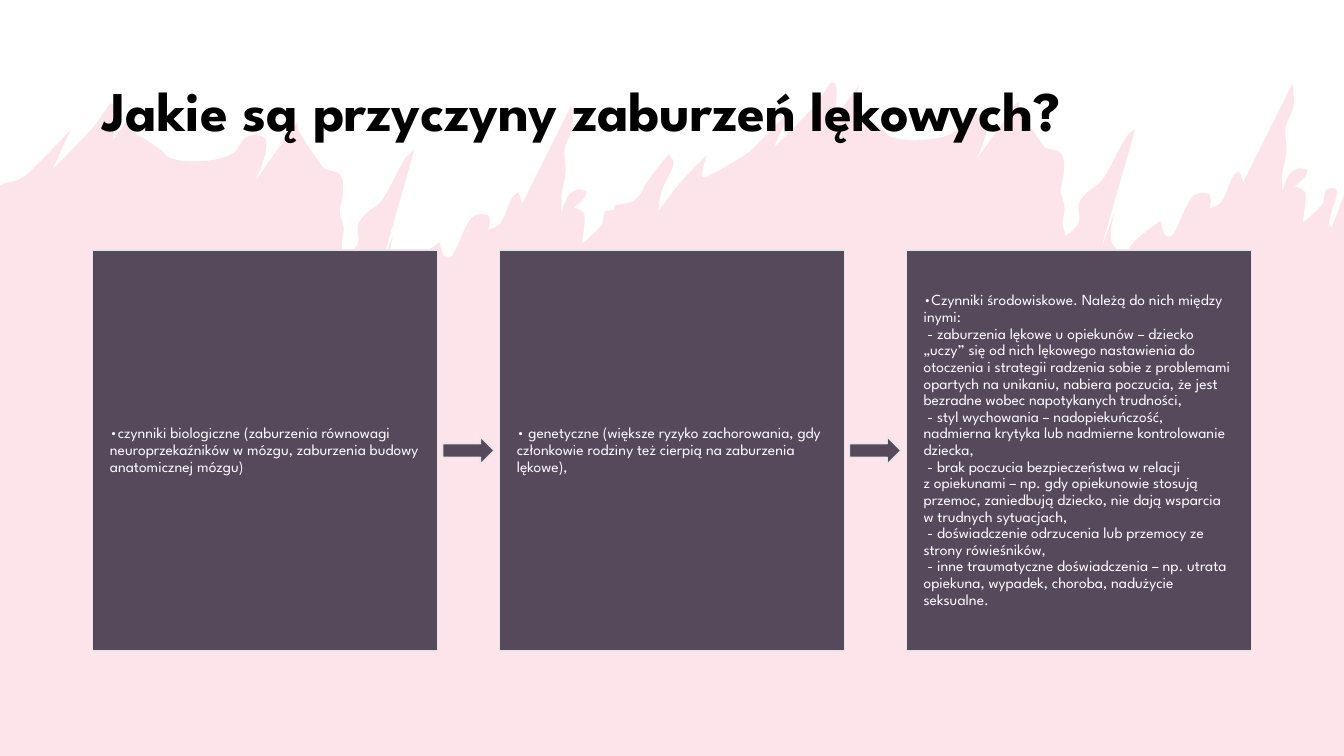
from dataclasses import dataclass
from math import dist

from lxml.etree import Element, SubElement
from pptx import Presentation
from pptx.dml.color import RGBColor
from pptx.enum.shapes import MSO_SHAPE as Preset
from pptx.enum.text import MSO_ANCHOR as Anchor, MSO_AUTO_SIZE as AutoSize, PP_ALIGN as Align
from pptx.oxml.ns import qn
from pptx.shapes.autoshape import Shape
from pptx.slide import Slide
from pptx.text.text import TextFrame
from pptx.util import Inches, Pt

Point = tuple[float, float]


@dataclass(frozen=True)
class Theme:
    font: str = "League Spartan"
    paper: str = "FFFFFF"
    wave: str = "F07C98"
    wave_alpha: int = 20
    title: str = "000000"
    card: str = "57495C"
    outline: str = "E7E6E6"
    card_text: str = "FFFFFF"
    title_size: int = 40
    card_size: int = 11


@dataclass(frozen=True)
class Box:
    left: float
    top: float
    width: float
    height: float

    def emu(self) -> tuple[int, ...]:
        return tuple(Inches(v) for v in (self.left, self.top, self.width, self.height))


THEME = Theme()
PAGE_WIDTH, PAGE_HEIGHT = 13.33, 7.5
TITLE_BOX = Box(0.92, 0.4, 11.5, 1.45)
CARD_ROW = Box(0.92, 2.48, 11.49, 3.98)
CARD_WIDTH, CARD_INSET = 3.42, 0.17
ARROW_WIDTH, ARROW_HEIGHT, ARROW_GAP = 0.51, 0.27, 0.05

HARD_SPACE = chr(160)
BOUND_WORDS = ("u", "w", "z", "i", "•")
TITLE = "Jakie są przyczyny zaburzeń lękowych?"
CAUSES = [
    "•czynniki biologiczne (zaburzenia równowagi neuroprzekaźników w mózgu, "
    "zaburzenia budowy anatomicznej mózgu)",
    "• genetyczne (większe ryzyko zachorowania, gdy członkowie rodziny też cierpią "
    "na zaburzenia lękowe),",
    "\v - ".join([
        "•Czynniki środowiskowe. Należą do nich między inymi:",
        "zaburzenia lękowe u opiekunów – dziecko „uczy” się od nich lękowego nastawienia "
        "do otoczenia i strategii radzenia sobie z problemami opartych na unikaniu, "
        "nabiera poczucia, że jest bezradne wobec napotykanych trudności,",
        "styl wychowania – nadopiekuńczość, nadmierna krytyka lub nadmierne "
        "kontrolowanie dziecka,",
        "brak poczucia bezpieczeństwa w relacji z opiekunami – np. gdy opiekunowie "
        "stosują przemoc, zaniedbują dziecko, nie dają wsparcia w trudnych sytuacjach,",
        "doświadczenie odrzucenia lub przemocy ze strony rówieśników,",
        "inne traumatyczne doświadczenia – np. utrata opiekuna, wypadek, choroba, "
        "nadużycie seksualne.",
    ]),
]

# The crest is drawn twice: once in place, once shifted to the left edge.
CREST_SHIFT = (-7.15, 0.21)
CREST: list[Point] = [
    (7.32, 1.58), (7.45, 1.49), (7.85, 1.08), (7.67, 1.47), (8.06, 1.07), (8.2, 0.88),
    (8.24, 0.82), (8.28, 0.83), (8.3, 0.91), (8.27, 1.18), (8.52, 0.85), (8.49, 1.1),
    (8.59, 1.17), (8.75, 1.28), (8.84, 1.36), (9.13, 1.39), (9.45, 1.32), (9.61, 1.14),
    (9.79, 1.19), (9.68, 1.59), (10.1, 1), (10.12, 1.1), (10.36, 1.46), (10.38, 1.47),
    (10.53, 1.53), (10.55, 1.73), (10.52, 1.88), (10.56, 2.06), (10.54, 2.21), (10.57, 2.34),
    (10.7, 2.21), (10.7, 2.03), (10.78, 1.91), (10.93, 1.79), (11.17, 1.36),
    (11.26, 1.28), (10.91, 2.5), (11.05, 2.12), (11.02, 2.38), (11.12, 2.52),
    (11.15, 2.52), (11.24, 2.41), (11.3, 2.35), (11.51, 2.19), (11.54, 2.3),
    (11.58, 2.35), (11.64, 2.32), (11.83, 1.95), (11.98, 1.92), (12.01, 1.99),
    (11.99, 2.07), (12.11, 2.01), (12.23, 1.75), (12.29, 1.7), (12.32, 1.77),
    (12.33, 1.81), (12.82, 0.83), (12.83, 1.05), (12.75, 1.27), (12.76, 1.5),
    (12.72, 1.72), (12.72, 1.91), (12.78, 1.74), (12.88, 1.67), (12.97, 1.69),
    (12.94, 1.76), (12.84, 1.85), (12.9, 1.87), (12.95, 1.92), (12.92, 2.21),
    (13.12, 2.02), (13.15, 1.89), (13.24, 1.87),
]
BRIDGE: list[Point] = [
    (6.1, 2.04), (6.27, 2), (6.34, 1.94), (6.43, 1.79), (6.63, 1.53), (6.68, 1.62),
    (6.56, 1.9), (6.53, 2.1), (6.74, 1.82), (7.01, 1.54), (6.96, 1.75), (7, 1.76),
]
RIGHT_EDGE: list[Point] = [(13.26, 1.92), (13.18, 2.21), (13.21, 2.26), (PAGE_WIDTH, 1.93)]


def color(code: str) -> RGBColor:
    return RGBColor.from_string(code)


def bind_short_words(text: str) -> str:
    """Keep one-letter words on the same line as the word after them."""
    words = text.split(" ")
    gaps = [HARD_SPACE if word in BOUND_WORDS else " " for word in words[:-1]]
    return "".join(word + gap for word, gap in zip(words, [*gaps, ""]))


def curve_handles(points: list[Point]) -> list[tuple[Point, Point]]:
    """Give each segment two control points, smooth in gentle bends and sharp at tips."""
    tangents: list[Point] = [(0, 0)]
    for (ax, ay), (bx, by), (cx, cy) in zip(points, points[1:], points[2:]):
        sharp = (bx - ax) * (cx - bx) + (by - ay) * (cy - by) <= 0
        chord = dist((ax, ay), (cx, cy))
        tangents.append((0, 0) if sharp else ((cx - ax) / chord, (cy - ay) / chord))
    tangents.append((0, 0))

    handles = []
    for start, end, leave, arrive in zip(points, points[1:], tangents, tangents[1:]):
        reach = dist(start, end) / 3
        handles.append((
            (start[0] + leave[0] * reach, start[1] + leave[1] * reach),
            (end[0] - arrive[0] * reach, end[1] - arrive[1] * reach),
        ))
    return handles


def draw_wave(page: Slide) -> None:
    dx, dy = CREST_SHIFT
    left_crest = [(x + dx, y + dy) for x, y in CREST]
    ridge = [(0, 1.84), (0.07, 1.81), *left_crest, *BRIDGE, *CREST, *RIGHT_EDGE]
    outline = [(Inches(x), Inches(y)) for x, y in [*ridge, (PAGE_WIDTH, PAGE_HEIGHT), (0, PAGE_HEIGHT)]]
    builder = page.shapes.build_freeform(*outline[0])
    builder.add_line_segments(outline[1:], close=True)
    wave = builder.convert_to_shape()
    wave.shadow.inherit = False
    wave.line.fill.background()
    wave.fill.solid()
    wave.fill.fore_color.rgb = color(THEME.wave)
    tint = wave.fill._xPr.find(qn("a:solidFill"))[0]
    SubElement(tint, qn("a:alpha")).set("val", str(THEME.wave_alpha * 1000))

    segments = list(wave._element.iter(qn("a:lnTo")))
    for segment, handles in zip(segments, curve_handles(ridge)):
        curve = Element(qn("a:cubicBezTo"))
        for x, y in handles:
            SubElement(curve, qn("a:pt"), x=str(Inches(x) - wave.left), y=str(Inches(y) - wave.top))
        curve.append(segment[0])
        segment.getparent().replace(segment, curve)


def write(frame: TextFrame, text: str, *, size: int, ink: str, bold: bool = False) -> None:
    frame.word_wrap = True
    frame.auto_size = AutoSize.NONE
    frame.vertical_anchor = Anchor.MIDDLE
    para = frame.paragraphs[0]
    para.text = text
    para.alignment = Align.LEFT
    para.line_spacing = 0.9
    for span in para.runs:
        span.font.name = THEME.font
        span.font.size = Pt(size)
        span.font.bold = bold
        span.font.color.rgb = color(ink)


def draw_block(page: Slide, preset: Preset, box: Box) -> Shape:
    block = page.shapes.add_shape(preset, *box.emu())
    block.shadow.inherit = False
    block.fill.solid()
    block.fill.fore_color.rgb = color(THEME.card)
    block.line.color.rgb = color(THEME.outline)
    block.line.width = Pt(1)
    return block


def draw_causes(page: Slide) -> None:
    pitch = (CARD_ROW.width - CARD_WIDTH) / (len(CAUSES) - 1)
    arrow_top = CARD_ROW.top + (CARD_ROW.height - ARROW_HEIGHT) / 2
    for index, cause in enumerate(CAUSES):
        left = CARD_ROW.left + index * pitch
        card = draw_block(page, Preset.RECTANGLE, Box(left, CARD_ROW.top, CARD_WIDTH, CARD_ROW.height))
        frame = card.text_frame
        frame.margin_left = frame.margin_right = Inches(CARD_INSET)
        frame.margin_top = frame.margin_bottom = Inches(CARD_INSET)
        write(frame, bind_short_words(cause), size=THEME.card_size, ink=THEME.card_text)
        if index < len(CAUSES) - 1:
            arrow_left = left + CARD_WIDTH + ARROW_GAP
            draw_block(page, Preset.RIGHT_ARROW, Box(arrow_left, arrow_top, ARROW_WIDTH, ARROW_HEIGHT))


def main() -> None:
    deck = Presentation()
    deck.slide_width, deck.slide_height = Inches(PAGE_WIDTH), Inches(PAGE_HEIGHT)
    page = deck.slides.add_slide(deck.slide_layouts.get_by_name("Title Only"))
    page.background.fill.solid()
    page.background.fill.fore_color.rgb = color(THEME.paper)
    draw_wave(page)
    title = page.shapes.title
    title.left, title.top, title.width, title.height = TITLE_BOX.emu()
    write(title.text_frame, TITLE, size=THEME.title_size, ink=THEME.title, bold=True)
    page.shapes._spTree.append(title._element)
    draw_causes(page)
    deck.save("out.pptx")


if __name__ == "__main__":
    main()
